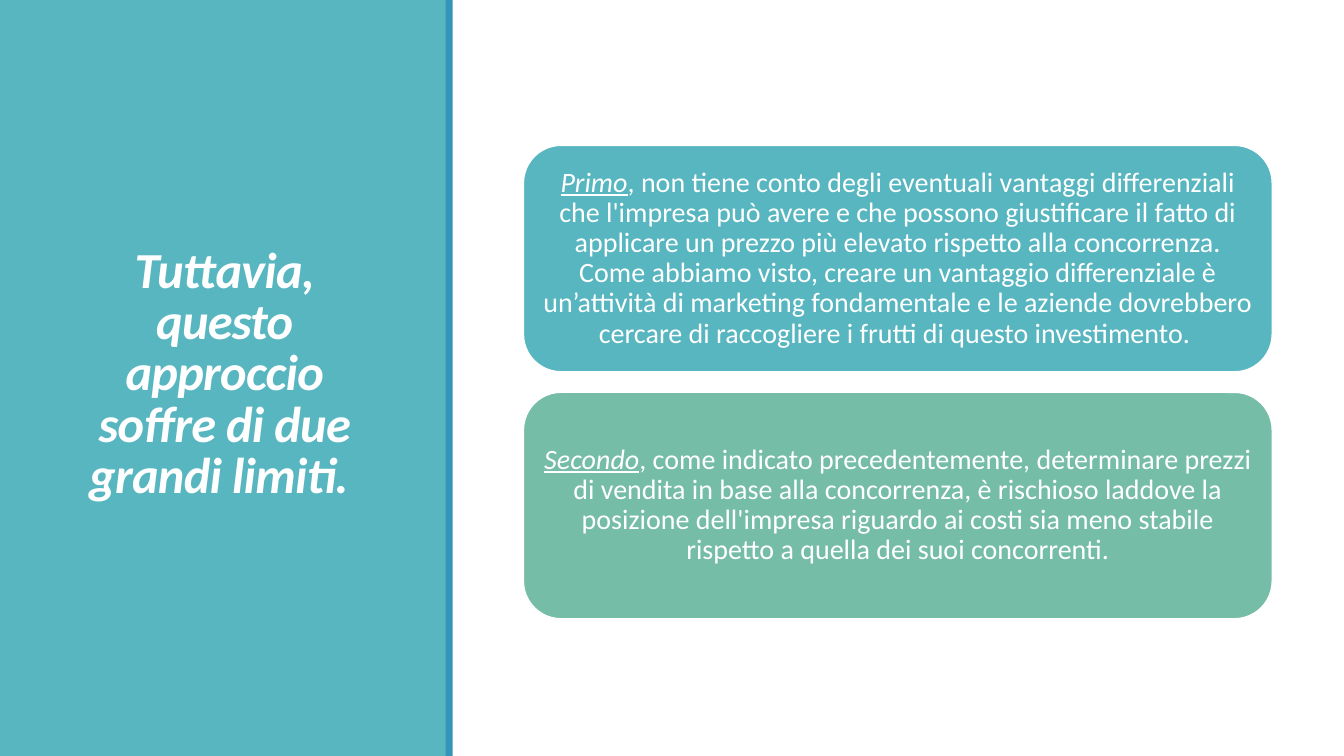
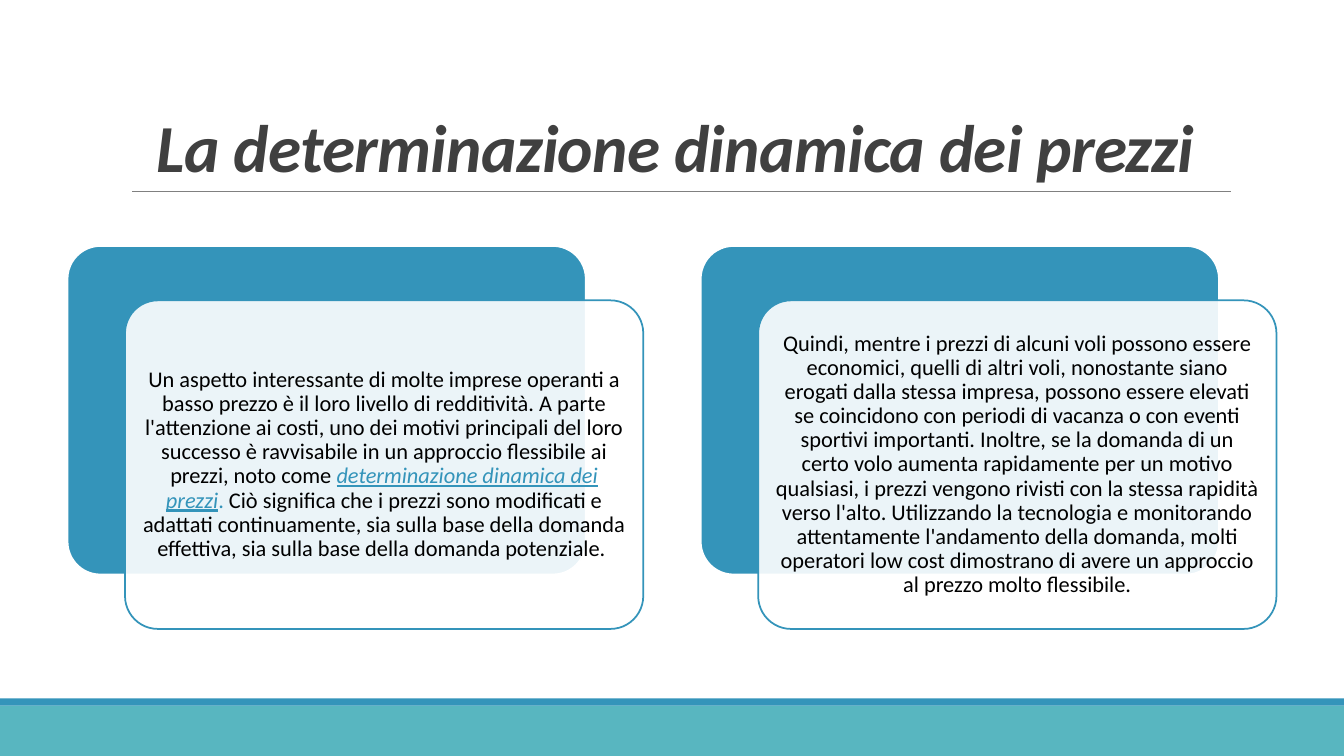
from dataclasses import dataclass

from lxml.etree import SubElement
from pptx import Presentation
from pptx.dml.color import RGBColor
from pptx.enum.shapes import MSO_CONNECTOR, MSO_SHAPE
from pptx.enum.text import MSO_ANCHOR, MSO_AUTO_SIZE, PP_ALIGN
from pptx.oxml.ns import qn
from pptx.util import Inches, Pt


@dataclass(frozen=True)
class Theme:
    font: str = "Calibri"
    teal: str = "58B6C0"
    blue: str = "3494BA"
    green: str = "75BDA7"
    white: str = "FFFFFF"
    black: str = "000000"
    dark: str = "404040"
    gray: str = "808080"
    side_title_size: int = 36
    title_size: int = 48
    card_size: int = 20
    body_size: int = 16
    outline: float = 1.25
    rule: float = 0.5
    stripe: float = 0.07


class Deck:
    """Holds the style and the current slide."""

    def __init__(self, theme):
        self.theme = theme
        self.presentation = Presentation()
        self.presentation.slide_width = Inches(13.33)
        self.presentation.slide_height = Inches(7.5)
        self.slide = None

    def new_slide(self):
        layout = self.presentation.slide_layouts.get_by_name("Title Only")
        self.slide = self.presentation.slides.add_slide(layout)

    def add_runs(self, paragraph, runs, size, color, line_spacing):
        """Each run is a text, or a pair of a text and its font settings."""
        paragraph.alignment = PP_ALIGN.CENTER
        paragraph.line_spacing = line_spacing
        for item in runs:
            text, settings = (item, {}) if isinstance(item, str) else item
            run = paragraph.add_run()
            run.text = text
            font = run.font
            font.name = self.theme.font
            font.size = Pt(size)
            font.color.rgb = RGBColor.from_string(settings.get("color", color))
            font.bold = settings.get("bold", False)
            font.italic = settings.get("italic", False)
            font.underline = settings.get("underline", False)

    def title(self, text, box, size, color, anchor):
        title = self.slide.shapes.title
        title.left, title.top, title.width, title.height = map(Inches, box)
        frame = title.text_frame
        frame.word_wrap = True
        frame.auto_size = MSO_AUTO_SIZE.NONE
        frame.vertical_anchor = anchor
        paragraph = frame.paragraphs[0]
        self.add_runs(paragraph, [(text, {"bold": True, "italic": True})], size, color, 0.85)
        # Tighter letter spacing, and the title in front of any panel
        for properties in title._element.iter(qn("a:rPr")):
            properties.set("spc", "-50")
        self.slide.shapes._spTree.append(title._element)

    def block(self, box, fill, line=None, kind=MSO_SHAPE.RECTANGLE, corner=None, opacity=None):
        shape = self.slide.shapes.add_shape(kind, *map(Inches, box))
        shape.shadow.inherit = False
        shape.fill.solid()
        shape.fill.fore_color.rgb = RGBColor.from_string(fill)
        if opacity is not None:
            color = shape._element.spPr.find(qn("a:solidFill")).find(qn("a:srgbClr"))
            SubElement(color, qn("a:alpha"), val=str(opacity * 1000))
        if line:
            shape.line.color.rgb = RGBColor.from_string(line)
            shape.line.width = Pt(self.theme.outline)
        else:
            shape.line.fill.background()
        if corner is not None:
            shape.adjustments[0] = corner
        return shape

    def card(self, box, fill, line, runs=(), size=None, color=None, inset=0.08, **look):
        shape = self.block(box, fill, line, MSO_SHAPE.ROUNDED_RECTANGLE, **look)
        if runs:
            frame = shape.text_frame
            frame.word_wrap = True
            frame.vertical_anchor = MSO_ANCHOR.MIDDLE
            frame.margin_left = frame.margin_right = Inches(inset)
            frame.margin_top = frame.margin_bottom = Inches(inset)
            self.add_runs(frame.paragraphs[0], runs, size, color, 0.9)

    def layered_card(self, left, top, runs):
        theme = self.theme
        width, height = 5.14, 3.26
        self.card((left, top, width, height), theme.blue, theme.white, corner=0.1)
        self.card((left + 0.57, top + 0.54, width, height), theme.white, theme.blue,
                  runs, theme.body_size, theme.black, 0.07, corner=0.1, opacity=90)

    def rule(self, left, right, top):
        line = self.slide.shapes.add_connector(
            MSO_CONNECTOR.STRAIGHT, Inches(left), Inches(top), Inches(right), Inches(top))
        line.line.color.rgb = RGBColor.from_string(self.theme.gray)
        line.line.width = Pt(self.theme.rule)
        SubElement(line._element.spPr, qn("a:effectLst"))

    def side_panel(self):
        self.block((0, 0, 4.43, 7.5), self.theme.teal)
        self.block((4.42, 0, self.theme.stripe, 7.5), self.theme.blue)

    def footer(self):
        self.block((0, 7, 13.33, 0.5), self.theme.teal)
        self.block((0, 6.93, 13.33, self.theme.stripe), self.theme.blue)


def build_limits(deck):
    theme = deck.theme
    deck.new_slide()
    deck.side_panel()
    deck.title("Tuttavia, questo approccio soffre di due grandi limiti. ",
               (0.54, 0.57, 3.37, 6.31), theme.side_title_size, theme.white, MSO_ANCHOR.MIDDLE)

    # Two stacked cards, each opening with an underlined word
    limits = [
        ("Primo", theme.teal,
         ", non tiene conto degli eventuali vantaggi differenziali che l'impresa può avere e che "
         "possono giustificare il fatto di applicare un prezzo più elevato rispetto alla "
         "concorrenza. Come abbiamo visto, creare un vantaggio differenziale è un’attività di "
         "marketing fondamentale e le aziende dovrebbero cercare di raccogliere i frutti di "
         "questo investimento. "),
        ("Secondo", theme.green,
         ", come indicato precedentemente, determinare prezzi di vendita in base alla "
         "concorrenza, è rischioso laddove la posizione dell'impresa riguardo ai costi sia meno "
         "stabile rispetto a quella dei suoi concorrenti."),
    ]
    height, gap = 2.25, 0.2
    for index, (lead, fill, text) in enumerate(limits):
        runs = [(lead, {"italic": True, "underline": True}), text]
        deck.card((5.19, 1.44 + index * (height + gap), 7.43, height), fill, theme.white,
                  runs, theme.card_size, theme.white)


def build_dynamic_pricing(deck):
    theme = deck.theme
    deck.new_slide()
    deck.footer()
    deck.rule(1.31, 12.21, 1.9)
    deck.title("La determinazione dinamica dei prezzi", (1.2, 0.31, 11, 1.59),
               theme.title_size, theme.dark, MSO_ANCHOR.BOTTOM)

    # Two layered cards side by side
    texts = [
        ["Un aspetto interessante di molte imprese operanti a basso prezzo è il loro livello di "
         "redditività. A parte l'attenzione ai costi, uno dei motivi principali del loro "
         "successo è ravvisabile in un approccio flessibile ai prezzi, noto come ",
         ("determinazione dinamica dei prezzi",
          {"color": theme.blue, "italic": True, "underline": True}),
         (". ", {"color": theme.blue}),
         "Ciò significa che i prezzi sono modificati e adattati continuamente, sia sulla base "
         "della domanda effettiva, sia sulla base della domanda potenziale. "],
        ["Quindi, mentre i prezzi di alcuni voli possono essere economici, quelli di altri voli, "
         "nonostante siano erogati dalla stessa impresa, possono essere elevati se coincidono "
         "con periodi di vacanza o con eventi sportivi importanti. Inoltre, se la domanda di un "
         "certo volo aumenta rapidamente per un motivo qualsiasi, i prezzi vengono rivisti con "
         "la stessa rapidità verso l'alto. Utilizzando la tecnologia e monitorando attentamente "
         "l'andamento della domanda, molti operatori low cost dimostrano di avere un approccio "
         "al prezzo molto flessibile."],
    ]
    for index, runs in enumerate(texts):
        deck.layered_card(0.67 + index * 6.28, 2.44, runs)


def main():
    deck = Deck(Theme())
    build_limits(deck)
    build_dynamic_pricing(deck)
    deck.presentation.save("out.pptx")


if __name__ == "__main__":
    main()
